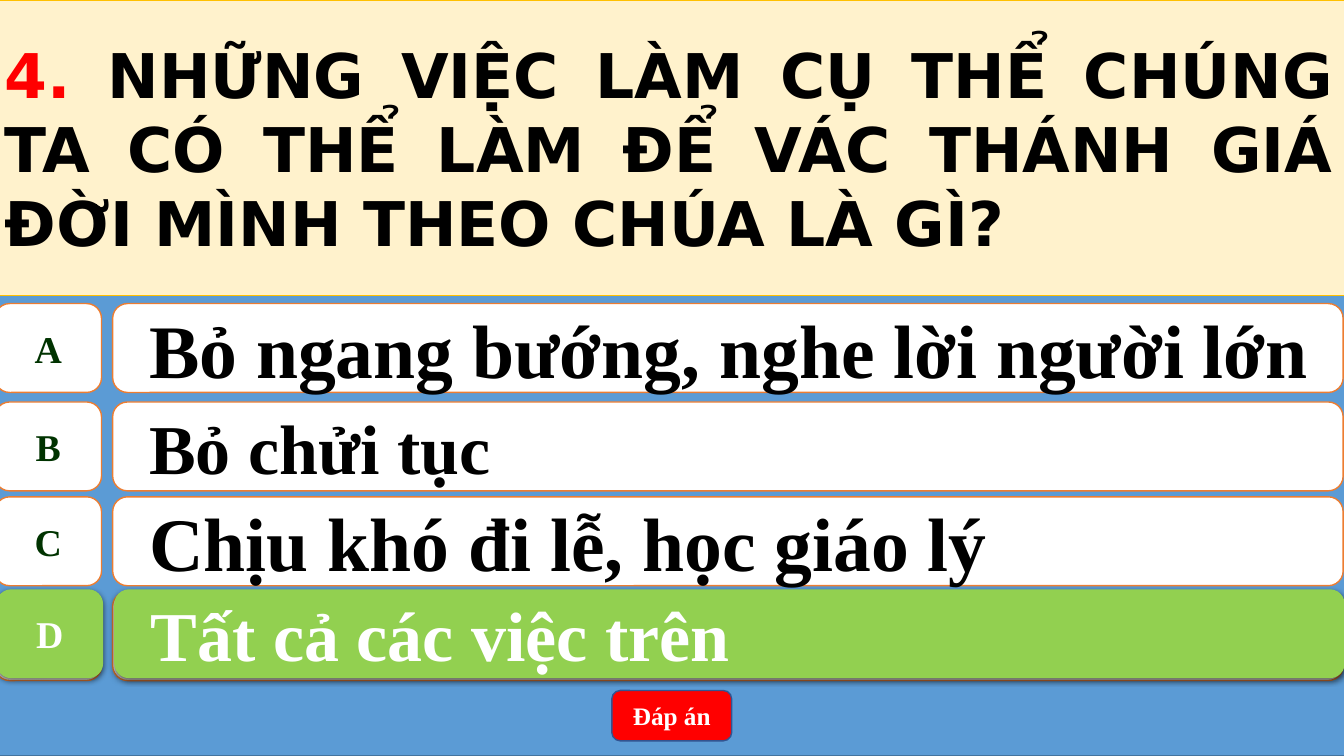
from lxml.etree import SubElement
from pptx import Presentation
from pptx.dml.color import RGBColor
from pptx.enum.shapes import MSO_SHAPE
from pptx.enum.text import MSO_ANCHOR, MSO_AUTO_SIZE, PP_ALIGN
from pptx.oxml.ns import qn
from pptx.util import Cm, Pt

ASK = [
    ("4. ", "FF0000"),
    ("NHỮNG VIỆC LÀM CỤ THỂ CHÚNG TA CÓ THỂ LÀM ĐỂ VÁC THÁNH GIÁ "
     "ĐỜI MÌNH THEO CHÚA LÀ GÌ?", "000000"),
]
ROWS = [
    ("A", "Bỏ ngang bướng, nghe lời người lớn", 54, 7.65),
    ("B", "Bỏ chửi tục", 50, 10.13),
    ("C", "Chịu khó đi lễ, học giáo lý", 54, 12.52),
    ("D", "Tất cả các việc trên", 50, 14.91),
]
BUTTON = "Đáp án"
SERIF = "Times New Roman"
WIDE, HIGH = 33.87, 19.05
LEFT, FULL = -0.13, 34.01
KEY_W, BAR_X, BAR_W, ROW_H = 2.69, 2.84, 31.01, 2.24


def color(code):
    return RGBColor.from_string(code)


def paint(shape, fill, line=None, width=1):
    shape.fill.solid()
    shape.fill.fore_color.rgb = color(fill)
    if line:
        shape.line.color.rgb = color(line)
        shape.line.width = Pt(width)
    else:
        shape.line.fill.background()


def style(run, face, size, ink):
    font = run.font
    font.name, font.size, font.bold = face, Pt(size), True
    font.color.rgb = color(ink)


def box(kind, left, top, width, height, fill, line=None):
    shape = slide.shapes.add_shape(kind, Cm(left), Cm(top), Cm(width), Cm(height))
    shape.shadow.inherit = False
    paint(shape, fill, line)
    return shape


def write(shape, text, size, ink, align=PP_ALIGN.CENTER):
    frame = shape.text_frame
    frame.text = text
    frame.vertical_anchor = MSO_ANCHOR.MIDDLE
    para = frame.paragraphs[0]
    para.alignment = align
    style(para.runs[0], SERIF, size, ink)
    return para


def shade(shape):
    effect = shape.element.spPr.find(qn("a:effectLst"))
    outer = SubElement(effect, qn("a:outerShdw"), blurRad=str(Pt(4.5)),
                       dist=str(Pt(1.5)), dir="5400000", rotWithShape="0")
    black = SubElement(outer, qn("a:srgbClr"), val="000000")
    SubElement(black, qn("a:alpha"), val="63000")


def answer(row, fill, line, key_ink, ink, right=0, up=0):
    mark, text, size, top = row
    key = box(MSO_SHAPE.FLOWCHART_ALTERNATE_PROCESS, LEFT + right, top - up,
              KEY_W, ROW_H, fill, line)
    write(key, mark, 27, key_ink)
    key.text_frame.word_wrap = False
    bar = box(MSO_SHAPE.ROUNDED_RECTANGLE, BAR_X + right, top - up,
              BAR_W, ROW_H, fill, line)
    para = write(bar, text, size, ink, PP_ALIGN.LEFT)
    para.level = 1
    props = para._p.get_or_add_pPr()
    props.set("marL", str(Cm(1.27)))
    props.set("indent", str(Cm(-0.71)))
    return key, bar


deck = Presentation()
deck.slide_width, deck.slide_height = Cm(WIDE), Cm(HIGH)
slide = deck.slides.add_slide(deck.slide_layouts[5])

box(MSO_SHAPE.RECTANGLE, LEFT, 0, FULL, HIGH, "5B9BD5", "43739E")
for row in ROWS:
    answer(row, "FFFFFF", "ED7D31", "003300", "000000")
button = box(MSO_SHAPE.ROUNDED_RECTANGLE, 15.42, 17.4, 3.02, 1.27, "FF0000", "325491")
write(button, BUTTON, 18, "FFFFFF")
for part in answer(ROWS[-1], "92D050", None, "FFFFFF", "FFFFFF", 0.04, 0.06):
    shade(part)

title = slide.shapes.title
title.left, title.top, title.width, title.height = Cm(LEFT), Cm(0), Cm(FULL), Cm(7.44)
paint(title, "FFF2CC", "FFC000", 0.5)
frame = title.text_frame
frame.auto_size = MSO_AUTO_SIZE.NONE
frame.word_wrap = True
frame.vertical_anchor = MSO_ANCHOR.MIDDLE
para = frame.paragraphs[0]
para.alignment = PP_ALIGN.JUSTIFY
for text, ink in ASK:
    run = para.add_run()
    run.text = text
    style(run, "DejaVu Sans", 44, ink)
title.element.getparent().append(title.element)

deck.save("out.pptx")
